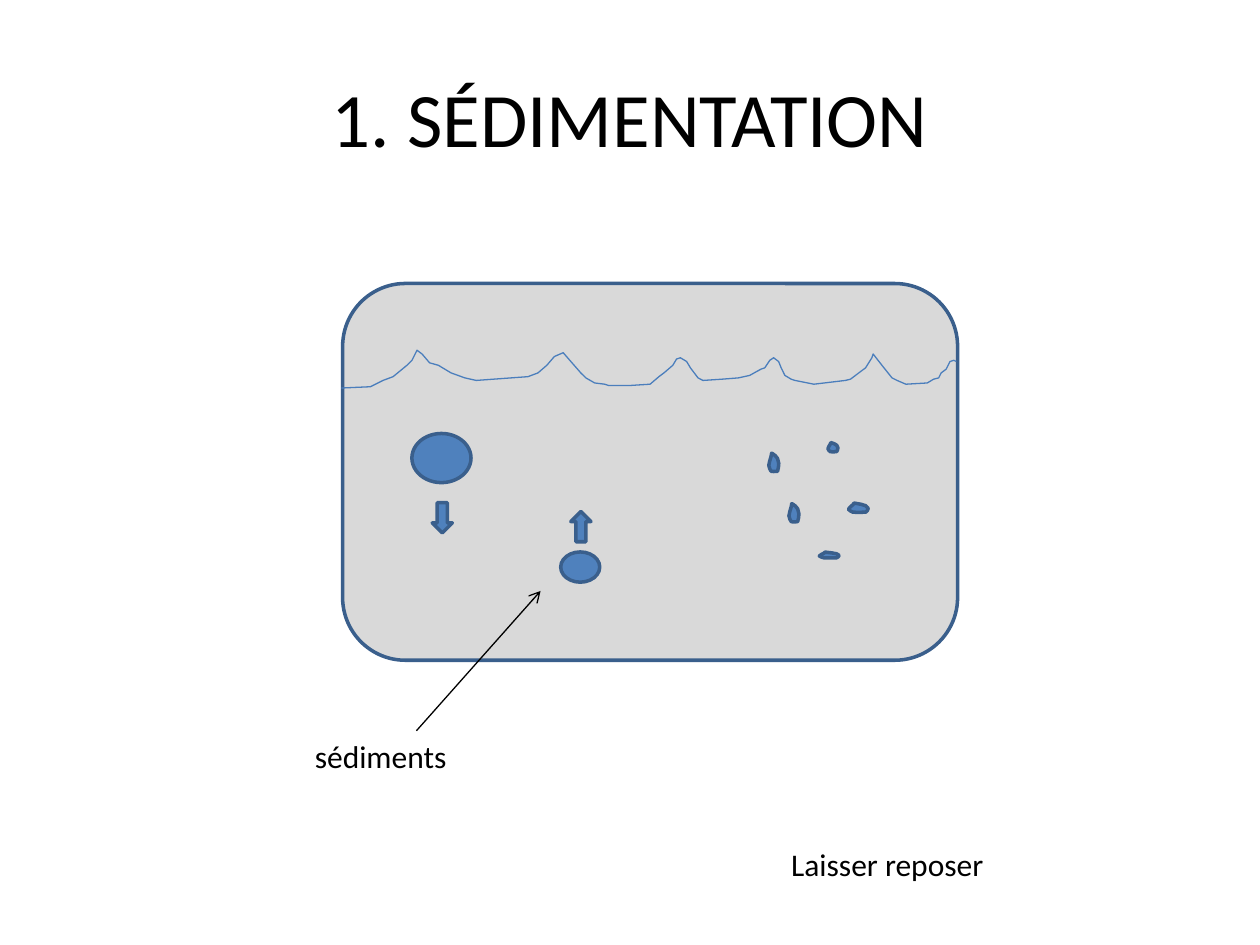
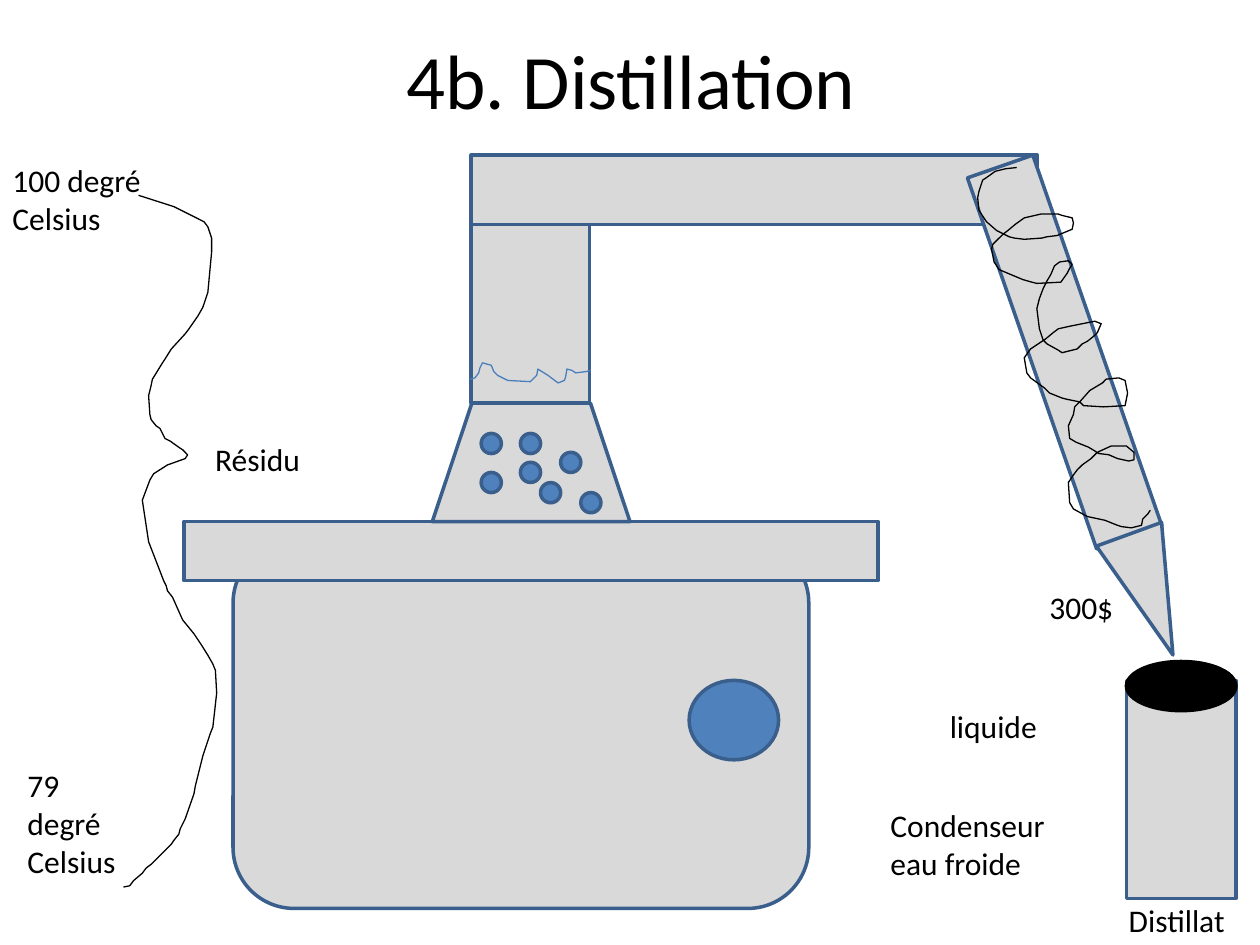
import pptx
import pptx.dml.color
import pptx.enum.shapes
import pptx.enum.text
import pptx.oxml
import pptx.oxml.ns
import pptx.util

Pt = pptx.util.Pt
Shape = pptx.enum.shapes.MSO_SHAPE

FONT = "Calibri"
COLORS = {
    "text": "000000",
    "vessel": "D9D9D9",
    "matter": "4F81BD",
    "outline": "3A5F8C",
    "water": "4B7EBC",
}

# Hand-drawn lines, in hundredths of an inch
HUNDREDTH = Pt(0.72)

TANK_WAVES = [
    (271, 308), (294, 307), (304, 302), (312, 299), (323, 290), (327, 286),
    (331, 278), (335, 281), (341, 288), (348, 290), (358, 296), (369, 300),
    (378, 302), (419, 299), (427, 296), (434, 290), (440, 283), (447, 280),
    (461, 296), (465, 300), (472, 304), (480, 305), (483, 306), (500, 306),
    (516, 305), (523, 299), (527, 296), (534, 290), (537, 285), (540, 284),
    (545, 287), (548, 292), (554, 300), (558, 302), (573, 301), (586, 300),
    (595, 298), (604, 293), (607, 292), (611, 286), (614, 284), (618, 287),
    (620, 292), (623, 298), (628, 301), (631, 302), (646, 305), (671, 302),
    (675, 301), (683, 295), (687, 292), (692, 284), (693, 281), (700, 290),
    (708, 300), (712, 302), (719, 305), (736, 304), (741, 301), (745, 300),
    (747, 296), (751, 293), (754, 287), (757, 286), (759, 287),
]

COLUMN_WAVES = [
    (373, 301), (377, 300), (380, 296), (381, 292), (383, 288), (390, 290),
    (392, 295), (395, 298), (403, 302), (421, 303), (426, 298), (427, 293),
    (435, 298), (443, 304), (448, 302), (449, 299), (450, 293), (454, 294),
    (457, 296), (465, 295), (469, 294),
]

COOLING_COIL = [
    (807, 133), (798, 134), (790, 136), (783, 141), (780, 143), (777, 152),
    (776, 157), (777, 167), (783, 176), (791, 183), (801, 188), (805, 189),
    (813, 190), (827, 189), (831, 188), (839, 187), (851, 182), (852, 177),
    (851, 173), (843, 171), (840, 170), (826, 170), (813, 173), (806, 178),
    (800, 183), (796, 186), (788, 194), (787, 198), (789, 208), (793, 214),
    (800, 217), (812, 222), (819, 224), (823, 225), (842, 224), (847, 217),
    (849, 213), (851, 210), (848, 207), (841, 208), (837, 211), (834, 218),
    (831, 223), (828, 229), (825, 237), (823, 245), (825, 261), (828, 270),
    (831, 273), (840, 278), (843, 280), (855, 277), (859, 273), (863, 271),
    (868, 267), (871, 264), (874, 257), (869, 255), (849, 259), (840, 261),
    (836, 264), (830, 269), (818, 277), (813, 284), (815, 296), (818, 300),
    (829, 308), (833, 312), (843, 316), (847, 317), (857, 319), (860, 322),
    (876, 323), (893, 322), (895, 312), (893, 302), (888, 300), (878, 301),
    (875, 304), (865, 310), (857, 319), (853, 323), (852, 329), (848, 338),
    (849, 348), (854, 351), (864, 355), (869, 358), (872, 360), (880, 361),
    (887, 364), (896, 366), (900, 365), (900, 359), (894, 354), (882, 354),
    (871, 359), (866, 364), (859, 369), (855, 373), (852, 377), (848, 383),
    (849, 399), (852, 404), (863, 410), (877, 413), (887, 417), (890, 418),
    (898, 419), (906, 417), (907, 412), (911, 408), (913, 405),
]

TEMPERATURE_BRACE = [
    (110, 155), (138, 164), (162, 176), (165, 180), (168, 189), (168, 200),
    (165, 232), (161, 244), (157, 251), (150, 261), (147, 265), (136, 277),
    (131, 285), (129, 288), (121, 301), (120, 306), (118, 314), (119, 329),
    (120, 333), (124, 338), (127, 340), (131, 348), (135, 350), (142, 355),
    (145, 357), (149, 361), (147, 364), (133, 369), (122, 376), (119, 381),
    (113, 397), (118, 430), (125, 448), (130, 461), (132, 465), (133, 469),
    (137, 474), (145, 492), (154, 503), (160, 512), (165, 520), (169, 527),
    (171, 532), (172, 550), (169, 577), (167, 582), (161, 600), (155, 624),
    (154, 630), (147, 650), (143, 658), (142, 662), (138, 667), (136, 670),
    (129, 677), (120, 686), (116, 689), (113, 693), (106, 699), (103, 703),
    (98, 704),
]

# Grain outline, in percent of its box
GRAIN = [
    (38, 6), (65, 16), (88, 30), (100, 55), (97, 75), (88, 94), (50, 95),
    (25, 94), (12, 82), (2, 65), (10, 45), (25, 19), (30, 4),
]


def rgb(name):
    return pptx.dml.color.RGBColor.from_string(COLORS[name])


def set_line(item, color, width):
    item.line.color.rgb = rgb(color)
    item.line.width = Pt(width)


def add_body(slide, kind, box, fill, outline="outline", rotation=0):
    body = slide.shapes.add_shape(kind, *map(Pt, box))
    body.shadow.inherit = False
    body.fill.solid()
    body.fill.fore_color.rgb = rgb(fill)
    set_line(body, outline, 2)
    body.rotation = rotation


def add_outline(slide, points, scale, origin=(0, 0), close=False):
    builder = slide.shapes.build_freeform(*points[0], scale=scale)
    builder.add_line_segments(points[1:], close=close)
    outline = builder.convert_to_shape(*map(Pt, origin))
    outline.shadow.inherit = False
    return outline


def add_stroke(slide, points, color):
    stroke = add_outline(slide, points, HUNDREDTH)
    stroke.fill.background()
    set_line(stroke, color, 0.75)


def add_grain(slide, left, top, width, height):
    scale = (Pt(width) / 100, Pt(height) / 100)
    grain = add_outline(slide, GRAIN, scale, (left, top), close=True)
    grain.fill.solid()
    grain.fill.fore_color.rgb = rgb("matter")
    set_line(grain, "outline", 2)


def add_label(slide, text, left, top, width, height=28.8, size=18):
    label = slide.shapes.add_textbox(*map(Pt, (left, top, width, height)))
    label.text_frame.word_wrap = True
    run = label.text_frame.paragraphs[0].add_run()
    run.text = text
    run.font.name = FONT
    run.font.size = Pt(size)
    run.font.color.rgb = rgb("text")
    return label


def add_title(slide, text, left, top):
    title = add_label(slide, text, left, top, 648, 90, size=44)
    title.text_frame.vertical_anchor = pptx.enum.text.MSO_ANCHOR.MIDDLE
    title.text_frame.paragraphs[0].alignment = pptx.enum.text.PP_ALIGN.CENTER


def add_pointer(slide, label, tip_x, tip_y):
    """Draw an arrow from the top of a label to a point."""
    pointer = slide.shapes.add_connector(
        pptx.enum.shapes.MSO_CONNECTOR.STRAIGHT, 0, 0, Pt(tip_x), Pt(tip_y))
    pointer.begin_connect(label, 0)
    set_line(pointer, "text", 0.75)
    head = pptx.oxml.parse_xml(
        f'<a:tailEnd {pptx.oxml.ns.nsdecls("a")} type="arrow"/>')
    pointer.line._get_or_add_ln().append(head)
    pointer._element.spPr.append(
        pptx.oxml.parse_xml(f'<a:effectLst {pptx.oxml.ns.nsdecls("a")}/>'))


def build_sedimentation(slide):
    add_title(slide, "1. SÉDIMENTATION", 36, 21.6)
    add_body(slide, Shape.ROUNDED_RECTANGLE, (195.8, 162, 351.4, 215.3), "vessel")
    add_stroke(slide, TANK_WAVES, "water")
    for kind, box in [
        (Shape.OVAL, (235.4, 247.7, 33.8, 28.1)),
        (Shape.OVAL, (320.4, 315.4, 22.3, 17.3)),
        (Shape.DOWN_ARROW, (247, 287.3, 11.5, 17.3)),
        (Shape.UP_ARROW, (326.2, 292.3, 11.5, 17.3)),
    ]:
        add_body(slide, kind, box, "matter")
    for box in [
        (473, 252.7, 5.8, 5.8),
        (484.6, 287.3, 11.5, 5.8),
        (439.2, 258.5, 5.8, 11.5),
        (450.7, 287.3, 5.8, 11.5),
        (468, 315.4, 11.5, 3.6),
    ]:
        add_grain(slide, *box)
    sediments = add_label(slide, "sédiments", 172.8, 417.6, 130.3)
    add_pointer(slide, sediments, 308.9, 337.7)
    add_label(slide, "Laisser reposer", 445, 479.5, 226.8)


def build_distillation(slide):
    add_title(slide, "4b. Distillation", 36.7, 0)
    add_body(slide, Shape.ROUNDED_RECTANGLE, (133.2, 309.6, 329, 209.5), "vessel")
    add_body(slide, Shape.RECTANGLE, (105.1, 298.1, 396.7, 33.8), "vessel")
    add_body(slide, Shape.OVAL, (393.8, 388.8, 51.1, 45.4), "matter")
    add_body(slide, Shape.FLOWCHART_MANUAL_OPERATION,
             (247, 230.4, 113, 67.7), "vessel", rotation=180)
    add_body(slide, Shape.RECTANGLE, (269.3, 128.2, 67.7, 102.2), "vessel")
    add_stroke(slide, COLUMN_WAVES, "water")
    for left, top in [(275, 247.7), (275, 270), (297.4, 264.2), (297.4, 247.7),
                      (308.9, 275.8), (320.4, 258.5), (331.9, 281.5)]:
        add_body(slide, Shape.OVAL, (left, top, 11.5, 11.5), "matter")
    add_body(slide, Shape.RECTANGLE, (269.3, 88.6, 323.3, 39.6), "vessel")
    add_body(slide, Shape.RECTANGLE, (496.1, 181.4, 224.6, 39.6), "vessel",
             rotation=70.8)
    add_body(slide, Shape.ISOSCELES_TRIANGLE, (637.9, 303.1, 39.6, 73.4), "vessel",
             rotation=160)
    add_body(slide, Shape.RECTANGLE, (643.7, 388.8, 62.6, 124.6), "vessel")
    add_body(slide, Shape.OVAL, (643.7, 378, 62.6, 28.1), "text", outline="text")
    add_stroke(slide, COOLING_COIL, "text")
    add_stroke(slide, TEMPERATURE_BRACE, "text")
    for text, *box in [
        ("100 degré Celsius", 0, 88.6, 87.8, 72.7),
        ("Résidu", 115.9, 247.7, 70.6),
        ("79 degré Celsius", 8.6, 434.2, 67.7, 72.7),
        ("Distillat", 637.9, 511.2, 82),
        ("liquide", 535.7, 400.3, 96.5),
        ("300$", 592.6, 332.6, 96.5),
        ("Condenseur eau froide", 501.8, 457.2, 124.6, 51.1),
    ]:
        add_label(slide, text, *box)


def main():
    deck = pptx.Presentation()
    deck.slide_width, deck.slide_height = Pt(720), Pt(540)
    blank = deck.slide_layouts[6]
    for build in (build_sedimentation, build_distillation):
        build(deck.slides.add_slide(blank))
    deck.save("out.pptx")


if __name__ == "__main__":
    main()
